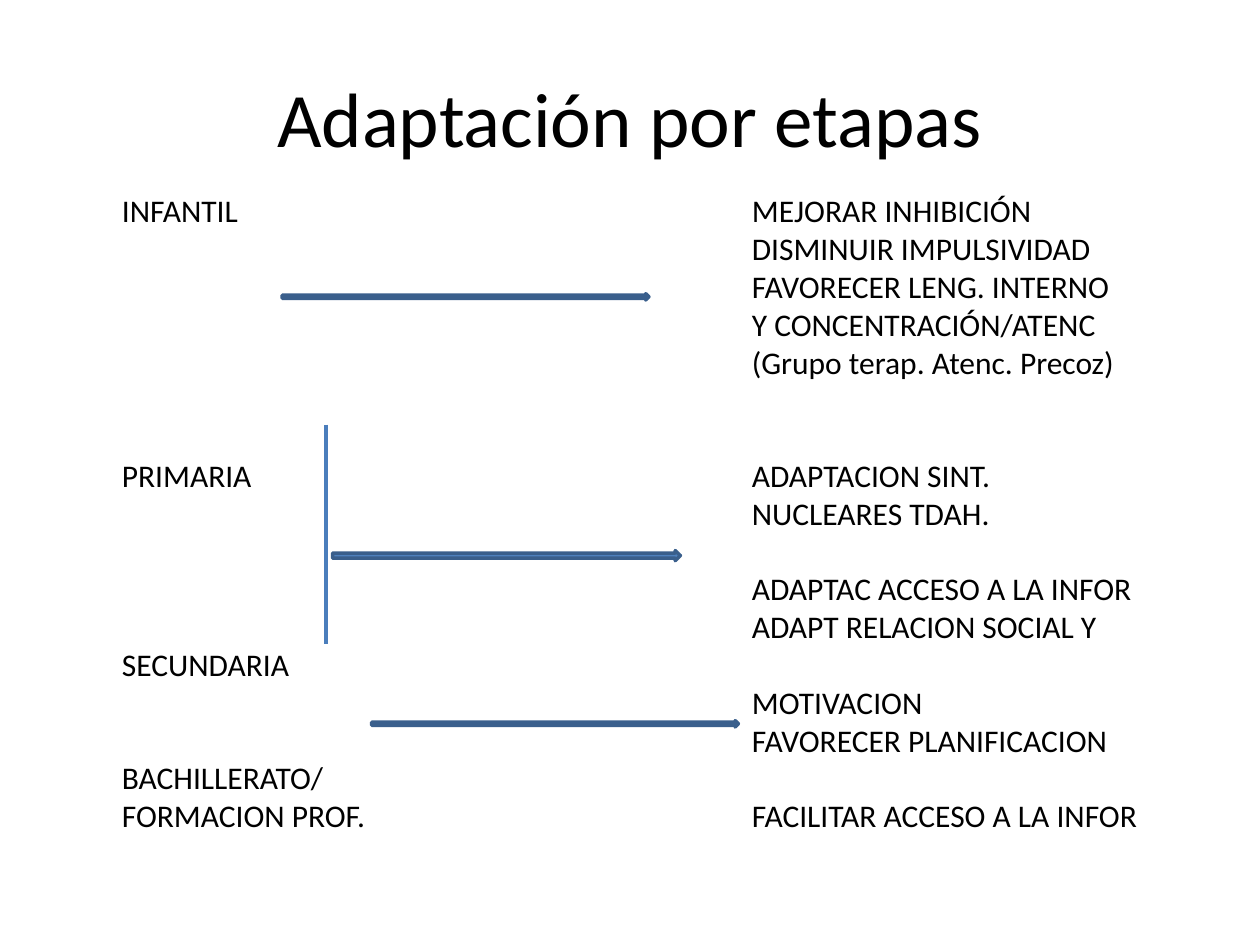
from lxml.etree import SubElement
from pptx import Presentation
from pptx.dml.color import RGBColor
from pptx.enum.shapes import MSO_CONNECTOR, MSO_SHAPE
from pptx.enum.text import MSO_ANCHOR, PP_ALIGN
from pptx.oxml.ns import qn
from pptx.util import Pt

COLORS = {"text": "000000", "arrow": "4F81BD", "outline": "3A5F8C", "line": "4B7EBC"}
LINE_HEIGHT = 21.6
GOAL_TAB = 360

rows = [
    ("INFANTIL", "MEJORAR INHIBICIÓN", 0),
    ("", "DISMINUIR IMPULSIVIDAD", 0),
    ("", "FAVORECER LENG. INTERNO", 0),
    ("", "Y CONCENTRACIÓN/ATENC", 0),
    ("", "(Grupo terap. Atenc. Precoz)", 0),
    ("PRIMARIA", "ADAPTACION SINT.", 2),
    ("", "NUCLEARES TDAH.", 0),
    ("", "ADAPTAC ACCESO A LA INFOR", 1),
    ("", "ADAPT RELACION SOCIAL Y", 0),
    ("SECUNDARIA", "", 0),
    ("", "MOTIVACION", 0),
    ("", "FAVORECER PLANIFICACION", 0),
    ("BACHILLERATO/", "", 0),
    ("FORMACION PROF.", "FACILITAR ACCESO A LA INFOR", 0),
]
arrows = [(161.3, 167.8, 209.5, 3.6), (212.4, 411.8, 209.5, 3.6), (190.1, 314.6, 198.7, 5.8)]


def add_text_box(left, top, width, height):
    box = page.shapes.add_textbox(Pt(left), Pt(top), Pt(width), Pt(height))
    box.text_frame.word_wrap = True
    return box.text_frame


def format_text(para, size):
    for span in para.runs:
        span.font.name = "Calibri"
        span.font.size = Pt(size)
        span.font.color.rgb = RGBColor.from_string(COLORS["text"])


deck = Presentation()
deck.slide_width, deck.slide_height = Pt(720), Pt(540)
page = deck.slides.add_slide(deck.slide_layouts[6])

title = add_text_box(36, 21.6, 648, 90)
title.vertical_anchor = MSO_ANCHOR.MIDDLE
title.text = "Adaptación por etapas"
title.paragraphs[0].alignment = PP_ALIGN.CENTER
format_text(title.paragraphs[0], 44)

stages = add_text_box(62.6, 105.8, 595.4, 378)
stages.text = "\n".join(f"{stage}\t{goal}" if goal else stage for stage, goal, gap in rows)
for para, (stage, goal, gap) in zip(stages.paragraphs, rows):
    para.space_before = Pt(gap * LINE_HEIGHT)
    format_text(para, 18)
    if goal:
        tabs = SubElement(para._p.get_or_add_pPr(), qn("a:tabLst"))
        SubElement(tabs, qn("a:tab"), pos=str(Pt(GOAL_TAB)), algn="l")

for left, top, width, height in arrows:
    arrow = page.shapes.add_shape(MSO_SHAPE.RIGHT_ARROW, Pt(left), Pt(top), Pt(width), Pt(height))
    arrow.shadow.inherit = False
    arrow.fill.solid()
    arrow.fill.fore_color.rgb = RGBColor.from_string(COLORS["arrow"])
    arrow.line.color.rgb = RGBColor.from_string(COLORS["outline"])
    arrow.line.width = Pt(2)

divider = page.shapes.add_connector(MSO_CONNECTOR.STRAIGHT, Pt(186.5), Pt(242.6), Pt(186.5), Pt(367.9))
divider.line.color.rgb = RGBColor.from_string(COLORS["line"])
divider.line.width = Pt(2.25)
SubElement(divider._element.spPr, qn("a:effectLst"))

deck.save("out.pptx")
